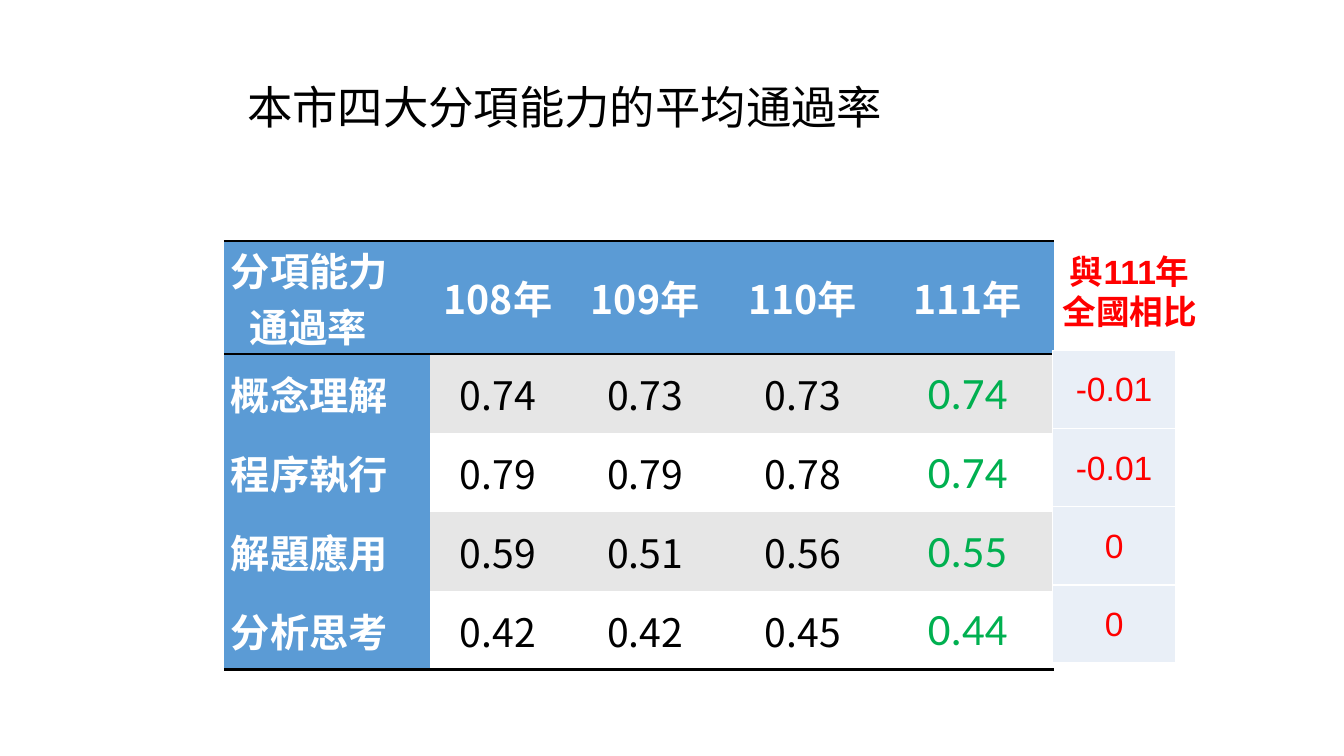
from dataclasses import dataclass

from lxml import etree
from pptx import Presentation
from pptx.dml.color import RGBColor
from pptx.enum.text import MSO_ANCHOR, MSO_AUTO_SIZE, PP_ALIGN
from pptx.oxml.ns import qn
from pptx.slide import Slide
from pptx.table import _Cell
from pptx.text.text import TextFrame
from pptx.util import Inches, Length, Pt

LEFT, CENTER = PP_ALIGN.LEFT, PP_ALIGN.CENTER
MIDDLE, TOP = MSO_ANCHOR.MIDDLE, MSO_ANCHOR.TOP
NO_AUTOFIT, GROW = MSO_AUTO_SIZE.NONE, MSO_AUTO_SIZE.SHAPE_TO_FIT_TEXT
SLIDE_WIDTH, SLIDE_HEIGHT = Inches(13.33), Inches(7.5)
TITLE_ONLY = 5
PLAIN_TABLE_STYLE = "{2D5ABB26-0587-4C30-8999-92F81FD0307C}"


@dataclass(frozen=True)
class TextStyle:
    size: float
    font: str
    color: str
    bold: bool = False


@dataclass(frozen=True)
class Theme:
    east_asian: str = "Noto Sans CJK TC"
    header_fill: str = "5B9BD5"
    band_fills: tuple[str, str] = ("E6E6E6", "FFFFFF")
    difference_fill: str = "E9EFF7"
    rule: str = "000000"
    gap: str = "FFFFFF"
    title: TextStyle = TextStyle(32.4, "Lato", "000000")
    header: TextStyle = TextStyle(28, "Noto Sans CJK TC", "FFFFFF", True)
    rate: TextStyle = TextStyle(28, "Noto Sans CJK TC", "000000")
    latest: TextStyle = TextStyle(32, "Calibri", "00B050")
    difference: TextStyle = TextStyle(24, "Arial", "FF0000")
    note: TextStyle = TextStyle(24, "Arial", "FF0000", True)


@dataclass(frozen=True)
class Box:
    left: float
    top: float
    width: float
    height: float

    def lengths(self) -> tuple[Length, Length, Length, Length]:
        return across(self.left), down(self.top), across(self.width), down(self.height)


@dataclass(frozen=True)
class CellLook:
    style: TextStyle
    fill: str
    align: PP_ALIGN = CENTER
    side_inset: float = 0.54
    top_inset: float = 0


@dataclass(frozen=True)
class Ability:
    name: str
    rates: tuple[str, ...]
    difference: str


THEME = Theme()
TITLE_BOX = Box(17.63, 9.73, 49.51, 9.47)
NOTE_BOX = Box(74.42, 32.53, 19.28, 12.13)
RATE_ORIGIN = (16.65, 31.87)
RATE_COLUMNS = (15.38, 10.05, 11.85, 11.63, 12.9)
RATE_ROWS = (14.13,) + (10.43,) * 4
DIFFERENCE_ORIGIN = (78.32, 46.4)
DIFFERENCE_COLUMNS = (9.15,)
DIFFERENCE_ROWS = (10.33,) * 4
YEARS = ("108年", "109年", "110年", "111年")
ABILITIES = (
    Ability("概念理解", ("0.74", "0.73", "0.73", "0.74"), "-0.01"),
    Ability("程序執行", ("0.79", "0.79", "0.78", "0.74"), "-0.01"),
    Ability("解題應用", ("0.59", "0.51", "0.56", "0.55"), "0"),
    Ability("分析思考", ("0.42", "0.42", "0.45", "0.44"), "0"),
)


def across(percent: float) -> Length:
    return Length(round(SLIDE_WIDTH * percent / 100))


def down(percent: float) -> Length:
    return Length(round(SLIDE_HEIGHT * percent / 100))


def write_text(frame: TextFrame, text: str, *, style: TextStyle, align: PP_ALIGN = LEFT,
               line_spacing: float = 1.0, last_indent: float = 0) -> None:
    frame.text = text
    for paragraph in frame.paragraphs:
        paragraph.alignment = align
        paragraph.line_spacing = line_spacing
        for run in paragraph.runs:
            run.font.size = Pt(style.size)
            run.font.bold = style.bold
            run.font.color.rgb = RGBColor.from_string(style.color)
            run.font.name = style.font
            etree.SubElement(run.font._element, qn("a:ea"), typeface=THEME.east_asian)
    if last_indent:
        properties = frame.paragraphs[-1]._p.get_or_add_pPr()
        properties.set("marL", str(across(last_indent)))


def add_borders(cell: _Cell, sides: str, color: str, points: float) -> None:
    properties = cell._tc.get_or_add_tcPr()
    for side in sides:
        line = etree.SubElement(properties, qn(f"a:ln{side}"), w=str(Pt(points)))
        fill = etree.SubElement(line, qn("a:solidFill"))
        etree.SubElement(fill, qn("a:srgbClr"), val=color)


def fill_cell(cell: _Cell, text: str, look: CellLook, last_indent: float = 0) -> None:
    cell.fill.solid()
    cell.fill.fore_color.rgb = RGBColor.from_string(look.fill)
    cell.vertical_anchor = MIDDLE
    cell.margin_left = cell.margin_right = across(look.side_inset)
    cell.margin_top, cell.margin_bottom = down(look.top_inset), 0
    write_text(cell.text_frame, text, style=look.style, align=look.align, last_indent=last_indent)


def add_grid(slide: Slide, origin: tuple[float, float], columns: tuple[float, ...],
             rows: tuple[float, ...]) -> list[list[_Cell]]:
    box = Box(*origin, sum(columns), sum(rows))
    frame = slide.shapes.add_table(len(rows), len(columns), *box.lengths())
    table = frame.table
    table.first_row = table.horz_banding = False
    table._tbl.tblPr.find(qn("a:tableStyleId")).text = PLAIN_TABLE_STYLE
    for column, width in zip(table.columns, columns):
        column.width = across(width)
    for row, height in zip(table.rows, rows):
        row.height = down(height)
    return [list(row.cells) for row in table.rows]


def add_rate_table(slide: Slide) -> None:
    header_cells, *body = add_grid(slide, RATE_ORIGIN, RATE_COLUMNS, RATE_ROWS)
    for cell in header_cells:
        add_borders(cell, "TB", THEME.rule, 2)
    for cell in body[-1]:
        add_borders(cell, "B", THEME.rule, 2)
    name_look = CellLook(THEME.header, THEME.header_fill, LEFT)
    year_look = CellLook(THEME.header, THEME.header_fill)
    fill_cell(header_cells[0], "分項能力\n通過率", name_look, last_indent=1.35)
    for cell, year in zip(header_cells[1:], YEARS):
        fill_cell(cell, year, year_look)
    for index, (cells, ability) in enumerate(zip(body, ABILITIES)):
        band = THEME.band_fills[index % 2]
        fill_cell(cells[0], ability.name, name_look)
        for cell, rate in zip(cells[1:-1], ability.rates):
            fill_cell(cell, rate, CellLook(THEME.rate, band))
        fill_cell(cells[-1], ability.rates[-1], CellLook(THEME.latest, band, CENTER, 0.08, 0.13))


def add_difference_table(slide: Slide) -> None:
    look = CellLook(THEME.difference, THEME.difference_fill, CENTER, 0.08, 0.13)
    rows = add_grid(slide, DIFFERENCE_ORIGIN, DIFFERENCE_COLUMNS, DIFFERENCE_ROWS)
    for (cell,), ability in zip(rows, ABILITIES):
        add_borders(cell, "LRTB", THEME.gap, 1)
        fill_cell(cell, ability.difference, look)


def add_title(slide: Slide, text: str) -> None:
    title = slide.shapes.title
    title.left, title.top, title.width, title.height = TITLE_BOX.lengths()
    title.text_frame.auto_size = NO_AUTOFIT
    title.text_frame.vertical_anchor = MIDDLE
    write_text(title.text_frame, text, style=THEME.title, line_spacing=0.9)


def add_note(slide: Slide, text: str) -> None:
    frame = slide.shapes.add_textbox(*NOTE_BOX.lengths()).text_frame
    frame.word_wrap = True
    frame.auto_size = GROW
    frame.vertical_anchor = TOP
    write_text(frame, text, style=THEME.note, align=CENTER)


def main() -> None:
    presentation = Presentation()
    presentation.slide_width, presentation.slide_height = SLIDE_WIDTH, SLIDE_HEIGHT
    slide = presentation.slides.add_slide(presentation.slide_layouts[TITLE_ONLY])
    add_title(slide, "本市四大分項能力的平均通過率")
    add_rate_table(slide)
    add_difference_table(slide)
    add_note(slide, "與111年\n全國相比")
    presentation.save("out.pptx")


if __name__ == "__main__":
    main()
